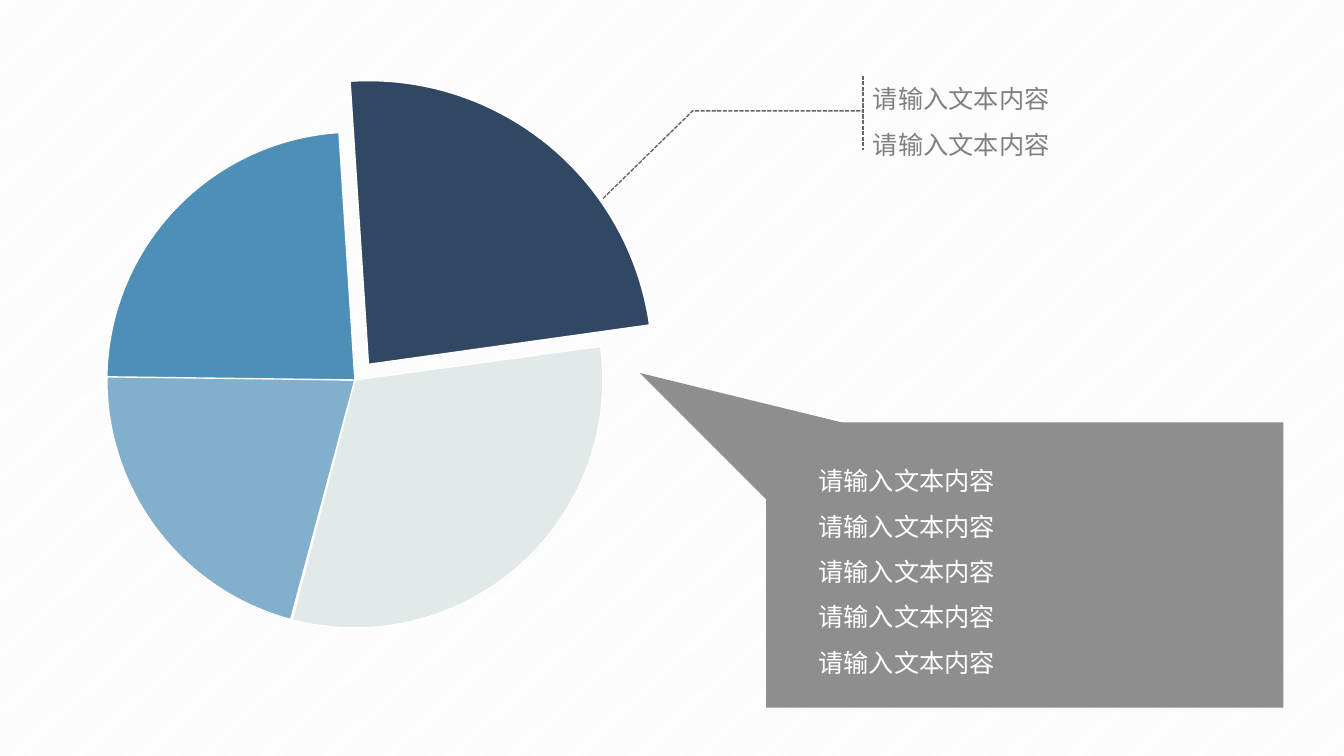
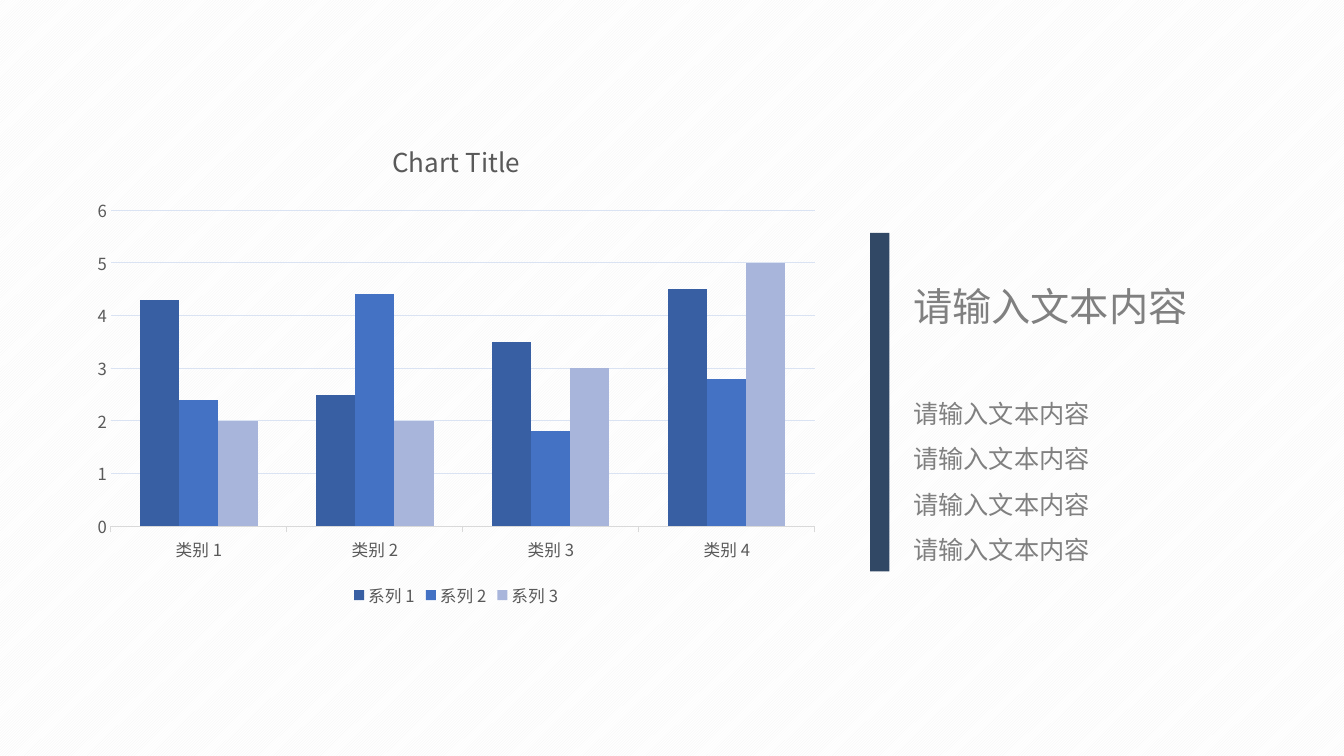
from lxml.etree import SubElement
from pptx import Presentation
from pptx.chart.data import CategoryChartData as ChartData
from pptx.dml.color import RGBColor as RGB
from pptx.enum.chart import XL_CHART_TYPE as CHART, XL_LEGEND_POSITION as LEGEND, XL_TICK_MARK as TICK
from pptx.enum.dml import MSO_LINE as DASH, MSO_PATTERN as PATTERN
from pptx.enum.shapes import MSO_CONNECTOR as LINK, MSO_SHAPE as SHAPE
from pptx.enum.text import MSO_AUTO_SIZE as FIT
from pptx.oxml.ns import qn
from pptx.util import Inches, Pt

FACE = "Noto Sans CJK SC"
PROMPT = "请输入文本内容"
WHITE = RGB(0xFF, 0xFF, 0xFF)
PALE = RGB(0xF2, 0xF2, 0xF2)
NAVY = RGB(0x31, 0x48, 0x65)
MIST = RGB(0xE2, 0xE9, 0xE9)
SKY = RGB(0x82, 0xB0, 0xCC)
BLUE = RGB(0x4D, 0x8F, 0xB7)
GREY = RGB(0x8E, 0x8E, 0x8E)
TEXT = RGB(0x80, 0x80, 0x80)
RULE = RGB(0x66, 0x66, 0x66)
LABEL = RGB(0x59, 0x59, 0x59)
AXIS = RGB(0xD9, 0xD9, 0xD9)
GRID = RGB(0xDA, 0xE3, 0xF3)
BARS = [RGB(0x38, 0x5F, 0xA3), RGB(0x44, 0x72, 0xC4), RGB(0xA8, 0xB5, 0xDB)]


def dress(font, size, color):
    font.size = Pt(size)
    font.color.rgb = color
    font.name = FACE
    SubElement(font._rPr, qn("a:ea")).set("typeface", FACE)


def stroke(line, color, width, dash=None):
    line.color.rgb = color
    line.width = Pt(width)
    if dash:
        line.dash_style = dash


prs = Presentation()
prs.slide_width, prs.slide_height = Inches(13.33), Inches(7.5)
back = prs.slide_master.background.fill
back.patterned()
back.pattern = PATTERN.DARK_UPWARD_DIAGONAL
back.fore_color.rgb = PALE
back.back_color.rgb = WHITE
blank = prs.slide_layouts[6]
first = prs.slides.add_slide(blank)
second = prs.slides.add_slide(blank)

disc = (1.06, 1.31, 4.92, 4.92)
slices = [
    ((0.84, 0.8, 5.63, 5.63), 266.28, 352.02, NAVY),
    (disc, 352.21, 104.64, MIST),
    (disc, 105.01, 181.42, SKY),
    (disc, 180.73, 266.32, BLUE),
]
for area, start, end, color in slices:
    pie = first.shapes.add_shape(SHAPE.PIE, *map(Inches, area))
    pie.shadow.inherit = False
    pie.adjustments[0] = start * 0.6
    pie.adjustments[1] = end * 0.6
    pie.fill.solid()
    pie.fill.fore_color.rgb = color
    stroke(pie.line, WHITE, 1)

leader = first.shapes.add_group_shape().shapes
pen = leader.build_freeform(Inches(5.98), Inches(1.97))
pen.add_line_segments([(Inches(6.87), Inches(1.1)), (Inches(8.56), Inches(1.1))], close=False)
elbow = pen.convert_to_shape()
elbow.shadow.inherit = False
elbow.fill.background()
post = leader.add_connector(LINK.STRAIGHT, Inches(8.56), Inches(0.75), Inches(8.56), Inches(1.49))
SubElement(post._element.spPr, qn("a:effectLst"))
for part in (elbow, post):
    stroke(part.line, RULE, 1, DASH.SQUARE_DOT)

blocks = [
    (first, SHAPE.RECTANGLE, (7.6, 4.19, 5.13, 2.83), GREY),
    (first, SHAPE.ISOSCELES_TRIANGLE, (6.83, 3.04, 1.11, 1.83), GREY),
    (second, SHAPE.RECTANGLE, (8.63, 2.31, 0.19, 3.36), NAVY),
]
for slide, kind, area, color in blocks:
    block = slide.shapes.add_shape(kind, *map(Inches, area))
    block.shadow.inherit = False
    block.fill.solid()
    block.fill.fore_color.rgb = color
    block.line.fill.background()
    if kind == SHAPE.ISOSCELES_TRIANGLE:
        block.adjustments[0] = 0
        block.rotation = 315

data = ChartData()
data.categories = [f"类别 {n}" for n in range(1, 5)]
rows = [(4.3, 2.5, 3.5, 4.5), (2.4, 4.4, 1.8, 2.8), (2, 2, 3, 5)]
for n, row in enumerate(rows, 1):
    data.add_series(f"系列 {n}", row)
area = map(Inches, (0.82, 1.18, 7.41, 4.89))
chart = second.shapes.add_chart(CHART.COLUMN_CLUSTERED, *area, data).chart
dress(chart.font, 11.9, LABEL)
title = chart.chart_title.text_frame.paragraphs[0].add_run()
title.text = "Chart Title"
dress(title.font, 18.6, LABEL)
title.font.bold = False
chart.has_legend = True
chart.legend.position = LEGEND.BOTTOM
chart.legend.include_in_layout = False
dress(chart.legend.font, 11.9, LABEL)
cats, vals = chart.category_axis, chart.value_axis
for axis in (cats, vals):
    dress(axis.tick_labels.font, 11.9, LABEL)
cats.major_tick_mark = TICK.OUTSIDE
stroke(cats.format.line, AXIS, 0.75)
vals.major_tick_mark = TICK.NONE
vals.minimum_scale, vals.maximum_scale, vals.major_unit = 0, 6, 1
vals.format.line.fill.background()
vals.has_major_gridlines = True
stroke(vals.major_gridlines.format.line, GRID, 0.75)
plot = chart.plots[0]
plot.vary_by_categories = False
plot.gap_width, plot.overlap = 150, 0
for bar, color in zip(plot.series, BARS):
    bar.format.fill.solid()
    bar.format.fill.fore_color.rgb = color

notes = [
    (first, (8.56, 0.63, 3.38, 0.96), 2, 18, 1.5, TEXT, True),
    (first, (8.02, 4.42, 3.38, 2.37), 5, 18, 1.5, WHITE, True),
    (second, (8.96, 3.75, 3.38, 1.92), 4, 18, 1.5, TEXT, True),
    (second, (8.96, 1.82, 2.95, 1.25), 1, 28, 3, TEXT, False),
]
for slide, area, count, size, gap, color, wrap in notes:
    frame = slide.shapes.add_textbox(*map(Inches, area)).text_frame
    frame.word_wrap = wrap
    frame.auto_size = FIT.SHAPE_TO_FIT_TEXT
    for n in range(count):
        para = frame.add_paragraph() if n else frame.paragraphs[0]
        para.line_spacing = float(gap)
        run = para.add_run()
        run.text = PROMPT
        dress(run.font, size, color)

prs.save("out.pptx")
